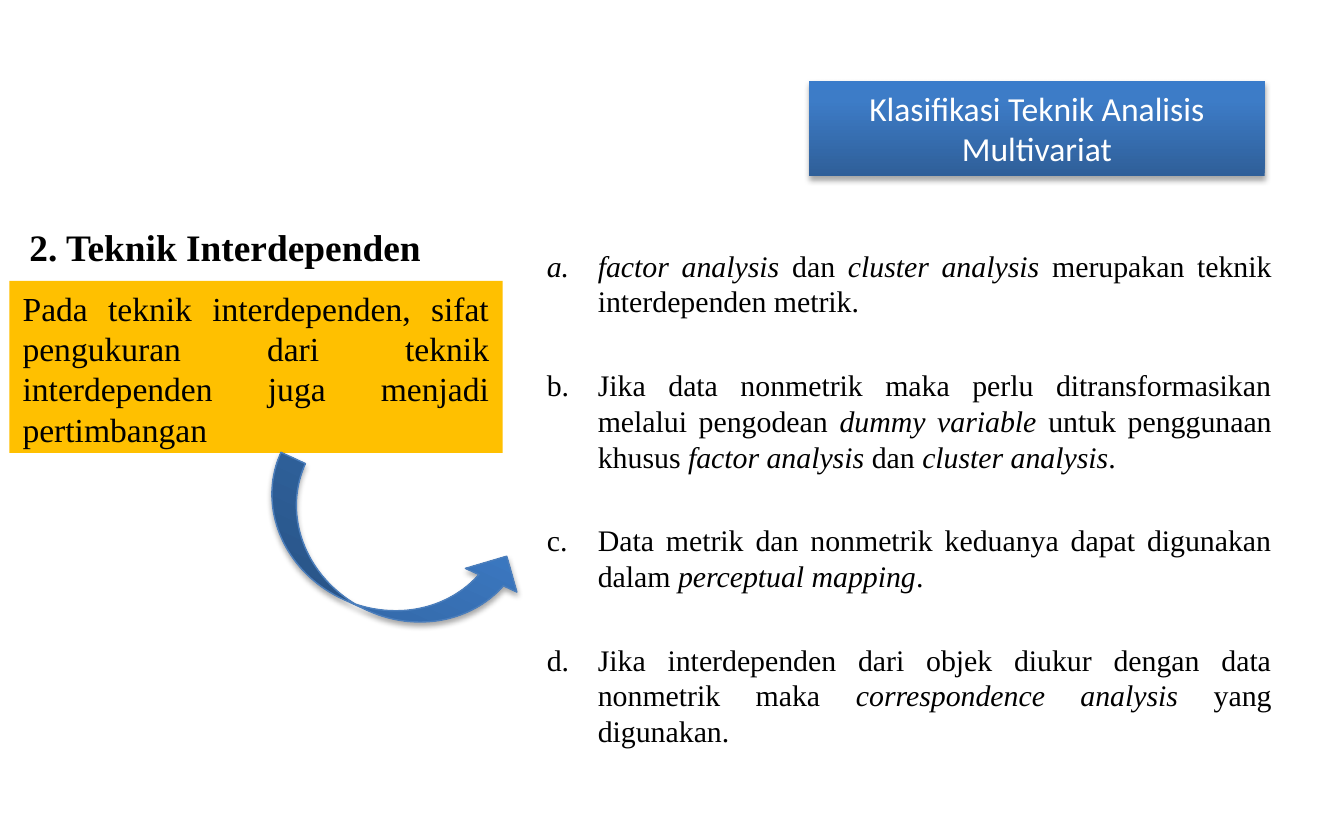
from dataclasses import dataclass

from lxml import etree
from pptx import Presentation
from pptx import util as u
from pptx.dml.color import RGBColor
from pptx.enum import shapes, text
from pptx.oxml.ns import qn

SERIF = "Times New Roman"
BLUE_STOPS = ((0, "2F5F99"), (80, "3D7CC7"), (100, "3A7CCB"))
LIST_INDENT = u.Inches(0.38)
LIST_GAP = u.Pt(25.6)


@dataclass(frozen=True)
class Area:
    left: float
    top: float
    width: float
    height: float

    def lengths(self) -> tuple:
        return tuple(u.Inches(n) for n in (self.left, self.top, self.width, self.height))


@dataclass(frozen=True)
class Span:
    words: str
    italic: bool = False


TECHNIQUES = (
    (Span("factor analysis ", True), Span("dan "), Span("cluster analysis ", True),
     Span("merupakan teknik interdependen metrik.")),
    (Span("Jika data nonmetrik maka perlu ditransformasikan melalui pengodean "),
     Span("dummy variable ", True), Span("untuk penggunaan khusus "),
     Span("factor analysis ", True), Span("dan "), Span("cluster analysis", True), Span(".")),
    (Span("Data metrik dan nonmetrik keduanya dapat digunakan dalam "),
     Span("perceptual mapping", True), Span(".")),
    (Span("Jika interdependen dari objek diukur dengan data nonmetrik maka "),
     Span("correspondence analysis", True), Span(" yang digunakan.")),
)


def rgb(value: str) -> RGBColor:
    return RGBColor.from_string(value)


def write(para, spans, *, size, font=SERIF, color="000000", bold=False,
          align=text.PP_ALIGN.JUSTIFY) -> None:
    para.alignment = align
    for item in spans:
        span = para.add_run()
        span.text = item.words
        span.font.name = font
        span.font.size = u.Pt(size)
        span.font.bold = bold
        span.font.italic = item.italic
        span.font.color.rgb = rgb(color)


def add_box(page, area: Area, anchor=text.MSO_ANCHOR.TOP):
    box = page.shapes.add_textbox(*area.lengths())
    box.text_frame.word_wrap = True
    box.text_frame.vertical_anchor = anchor
    return box


def add_letter(para) -> None:
    """Number the paragraph a., b., c. with a hanging indent."""
    properties = para._p.get_or_add_pPr()
    properties.set("marL", str(LIST_INDENT))
    properties.set("indent", str(-LIST_INDENT))
    etree.SubElement(properties, qn("a:buFont"), typeface="+mj-lt")
    etree.SubElement(properties, qn("a:buAutoNum"), type="alphaLcPeriod")


def add_blue_shape(page, kind, area: Area):
    """Add a shape with the blue gradient and a soft shadow below it."""
    shape = page.shapes.add_shape(kind, *area.lengths())
    shape.fill.gradient()
    shape.fill.gradient_angle = 90
    properties = shape._element.spPr
    stops = properties.find(".//" + qn("a:gsLst"))
    for old in list(stops):
        stops.remove(old)
    for percent, color in BLUE_STOPS:
        stop = etree.SubElement(stops, qn("a:gs"), pos=str(percent * 1000))
        etree.SubElement(stop, qn("a:srgbClr"), val=color)

    shape.shadow.inherit = False
    shadow = etree.SubElement(
        properties.find(qn("a:effectLst")), qn("a:outerShdw"),
        blurRad=str(u.Pt(3.1)), dist=str(u.Pt(1.8)), dir="5400000", rotWithShape="0")
    black = etree.SubElement(shadow, qn("a:srgbClr"), val="000000")
    etree.SubElement(black, qn("a:alpha"), val="35000")
    return shape


def main() -> None:
    deck = Presentation()
    deck.slide_width, deck.slide_height = u.Inches(10), u.Inches(6.25)
    page = deck.slides.add_slide(deck.slide_layouts[6])

    heading = add_box(page, Area(0.12, 0.99, 3.29, 1.06), text.MSO_ANCHOR.BOTTOM)
    write(heading.text_frame.paragraphs[0], [Span("2. Teknik Interdependen")],
          size=20, bold=True, align=text.PP_ALIGN.LEFT)

    techniques = add_box(page, Area(3.97, 1.79, 5.59, 4.27)).text_frame
    for index, spans in enumerate(TECHNIQUES):
        para = techniques.add_paragraph() if index else techniques.paragraphs[0]
        if index:
            para.space_before = LIST_GAP
        add_letter(para)
        write(para, spans, size=16)

    summary = add_box(page, Area(0.07, 2.09, 3.67, 1.28))
    summary.fill.solid()
    summary.fill.fore_color.rgb = rgb("FFC000")
    write(summary.text_frame.paragraphs[0],
          [Span("Pada teknik interdependen, sifat pengukuran dari teknik "
                "interdependen juga menjadi pertimbangan")], size=18)

    banner = add_blue_shape(page, shapes.MSO_SHAPE.RECTANGLE, Area(6.02, 0.6, 3.39, 0.71))
    banner.line.fill.background()
    banner.text_frame.word_wrap = True
    banner.text_frame.vertical_anchor = text.MSO_ANCHOR.MIDDLE
    write(banner.text_frame.paragraphs[0], [Span("Klasifikasi Teknik Analisis Multivariat")],
          size=18, font="Calibri", color="FFFFFF", align=text.PP_ALIGN.CENTER)

    arrow = add_blue_shape(page, shapes.MSO_SHAPE.CURVED_UP_ARROW, Area(1.83, 3.76, 2.06, 0.8))
    arrow.rotation = 24.7
    for index, value in enumerate((0.25, 0.527, 0.264)):
        arrow.adjustments[index] = value
    arrow.line.color.rgb = rgb("4B7EBC")
    arrow.line.width = u.Pt(0.75)

    deck.save("out.pptx")


if __name__ == "__main__":
    main()
